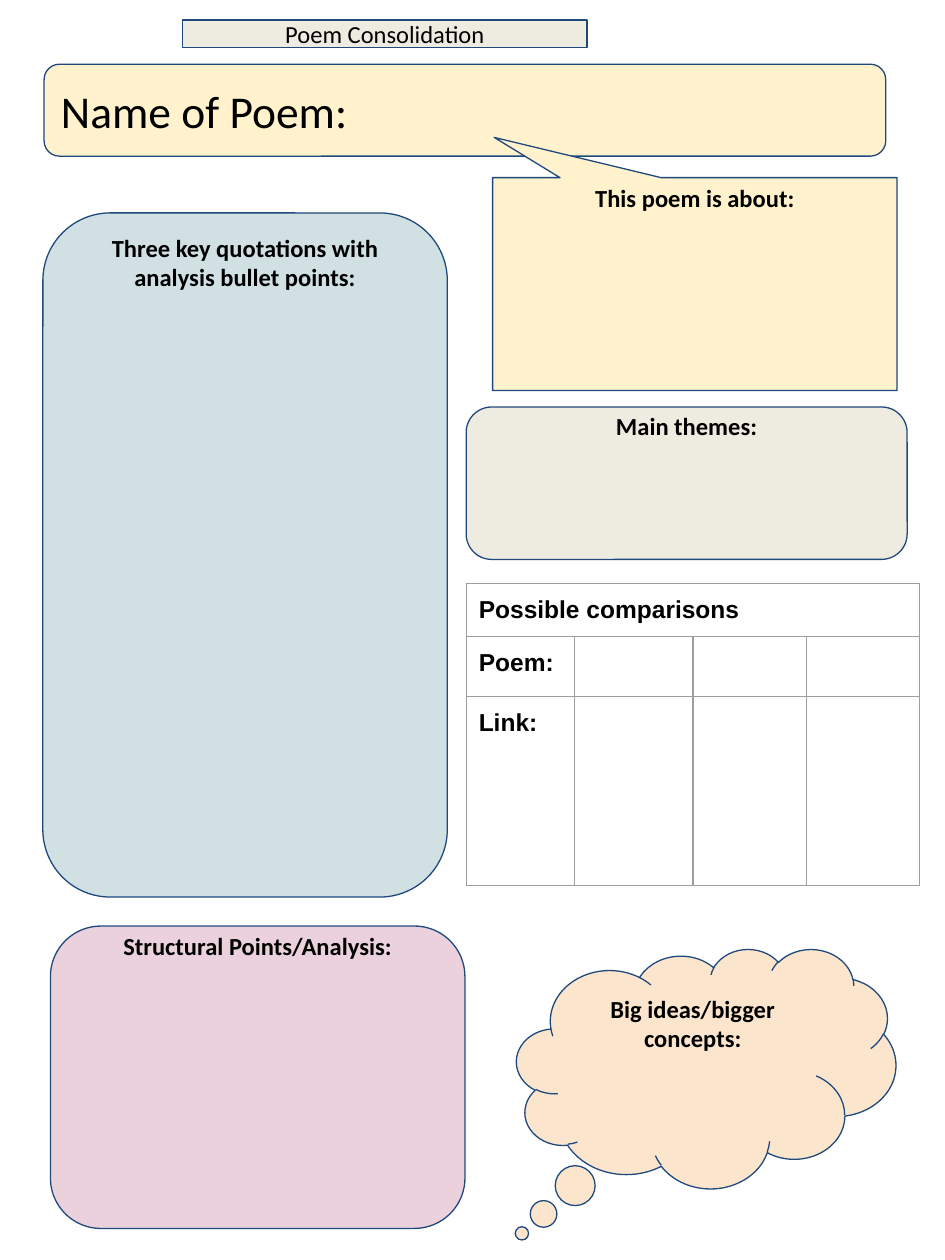
from lxml.etree import SubElement
from pptx import Presentation
from pptx.dml.color import RGBColor
from pptx.enum.shapes import MSO_SHAPE
from pptx.enum.text import MSO_ANCHOR, MSO_AUTO_SIZE, PP_ALIGN
from pptx.oxml.ns import qn
from pptx.util import Inches, Pt

COLORS = {
    "outline": "1F497D",
    "text": "000000",
    "grid": "9E9E9E",
    "cream": "FFF2CC",
    "teal": "D0E0E3",
    "pink": "EAD1DC",
    "peach": "FCE5CD",
    "stone": "EEECE1",
}


def write_text(text_frame, text, size=14, font_name="Calibri", bold=True, align=PP_ALIGN.CENTER):
    paragraph = text_frame.paragraphs[0]
    paragraph.alignment = align
    run = paragraph.add_run()
    run.text = text
    for name, value in {"size": Pt(size), "name": font_name, "bold": bold}.items():
        setattr(run.font, name, value)
    run.font.color.rgb = RGBColor.from_string(COLORS["text"])


def style_box(shape, color, anchor, top_margin=0.1):
    """Fill and outline a box and set how its text sits inside it."""
    shape.shadow.inherit = False
    shape.fill.solid()
    shape.fill.fore_color.rgb = RGBColor.from_string(COLORS[color])
    shape.line.color.rgb = RGBColor.from_string(COLORS["outline"])
    shape.line.width = Pt(0.75)
    frame_format = {
        "word_wrap": True,
        "auto_size": MSO_AUTO_SIZE.NONE,
        "vertical_anchor": anchor,
        "margin_left": Inches(0.1),
        "margin_right": Inches(0.1),
        "margin_top": Inches(top_margin),
        "margin_bottom": Inches(0.1),
    }
    for name, value in frame_format.items():
        setattr(shape.text_frame, name, value)


presentation = Presentation()
presentation.slide_width = Inches(7.5)
presentation.slide_height = Inches(10)
slide = presentation.slides.add_slide(presentation.slide_layouts[5])

# Title: the placeholder takes a rounded outline
title = slide.shapes.title
title_place = {"left": 1.45, "top": 0.16, "width": 3.21, "height": 0.22}
for name, value in title_place.items():
    setattr(title, name, Inches(value))
geometry = SubElement(title.element.spPr, qn("a:prstGeom"), prst="roundRect")
SubElement(geometry, qn("a:avLst"))
style_box(title, "stone", MSO_ANCHOR.MIDDLE)
write_text(title.text_frame, "Poem Consolidation", bold=False)

# Poem name banner
banner = slide.shapes.add_shape(
    MSO_SHAPE.ROUNDED_RECTANGLE, Inches(0.35), Inches(0.51), Inches(6.68), Inches(0.73)
)
style_box(banner, "cream", MSO_ANCHOR.MIDDLE)
write_text(banner.text_frame, "Name of Poem:", size=26, bold=False, align=PP_ALIGN.LEFT)

# Note boxes: heading, preset, adjustments, place, colour, top margin
rounded = MSO_SHAPE.ROUNDED_RECTANGLE
note_boxes = [
    ("Three key quotations with analysis bullet points:", rounded, [0.167],
     (0.34, 1.69, 3.21, 5.43), "teal", 0),
    ("Structural Points/Analysis:", rounded, [0.167],
     (0.4, 7.35, 3.29, 2.4), "pink", -0.08),
    ("This poem is about:", MSO_SHAPE.ROUNDED_RECTANGULAR_CALLOUT, [-0.496, -0.689, 0],
     (3.91, 1.41, 3.21, 1.69), "cream", 0.04),
    ("Big ideas/bigger concepts:", MSO_SHAPE.CLOUD_CALLOUT, [-0.486, 0.689],
     (4.1, 7.53, 3.01, 1.9), "peach", 0.07),
    ("Main themes:", rounded, [0.167],
     (3.7, 3.23, 3.5, 1.21), "stone", -0.03),
]
for heading, preset, adjustments, place, color, top_margin in note_boxes:
    box = slide.shapes.add_shape(preset, *map(Inches, place))
    for index, value in enumerate(adjustments):
        box.adjustments[index] = value
    style_box(box, color, MSO_ANCHOR.TOP, top_margin)
    write_text(box.text_frame, heading)

# Comparison table
column_widths = [0.86, 0.94, 0.9, 0.9]
row_heights = [0.42, 0.48, 1.5]
row_labels = ["Possible comparisons", "Poem:", "Link:"]
table = slide.shapes.add_table(
    len(row_heights), len(column_widths), Inches(3.7), Inches(4.63),
    Inches(sum(column_widths)), Inches(sum(row_heights)),
).table
table.first_row = False
table.horz_banding = False
for column, width in zip(table.columns, column_widths):
    column.width = Inches(width)
for row, height in zip(table.rows, row_heights):
    row.height = Inches(height)
    for cell in row.cells:
        properties = cell._tc.get_or_add_tcPr()
        for side in ("lnL", "lnR", "lnT", "lnB"):
            border = SubElement(properties, qn(f"a:{side}"), w=str(Pt(0.75)))
            border_fill = SubElement(border, qn("a:solidFill"))
            SubElement(border_fill, qn("a:srgbClr"), val=COLORS["grid"])
        cell.fill.background()
table.cell(0, 0).merge(table.cell(0, len(column_widths) - 1))
for index, label in enumerate(row_labels):
    cell = table.cell(index, 0)
    for side in ("left", "right", "top", "bottom"):
        setattr(cell, f"margin_{side}", Inches(0.1))
    write_text(cell.text_frame, label, font_name="Arial", align=PP_ALIGN.LEFT)

presentation.save("out.pptx")
